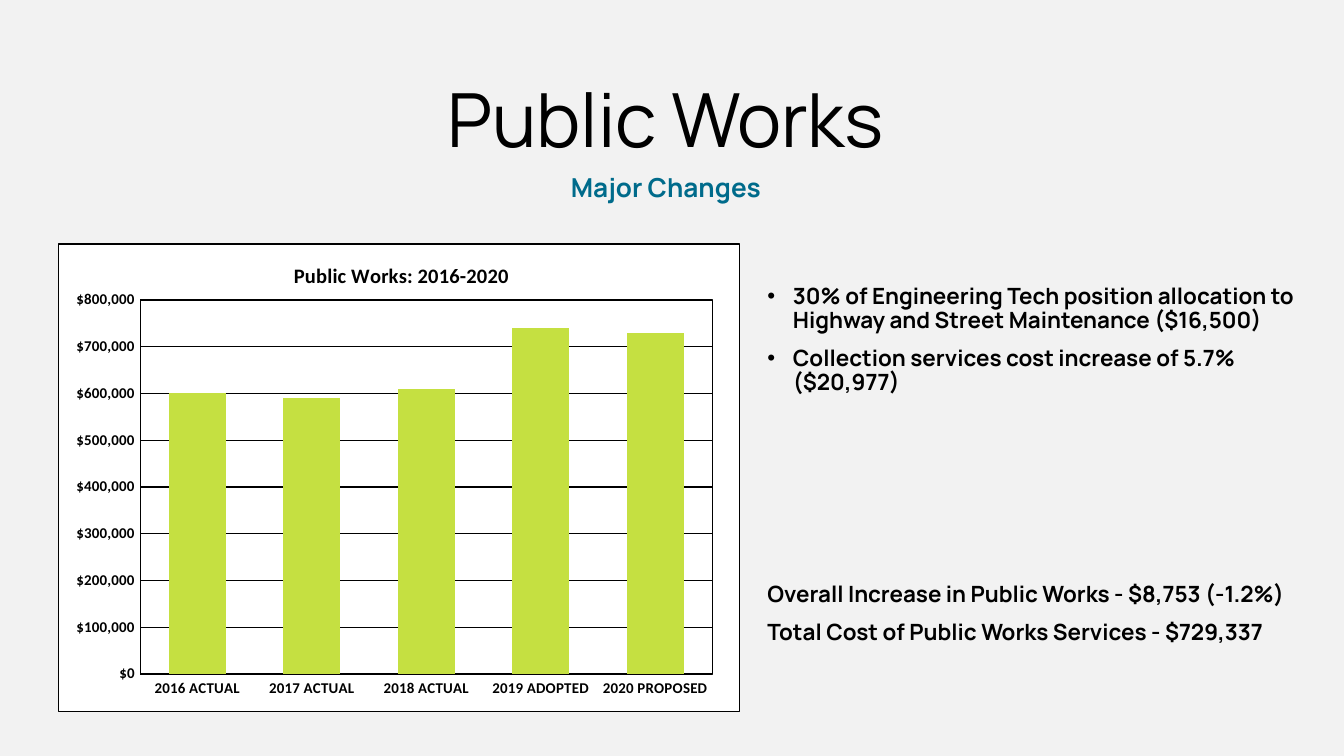
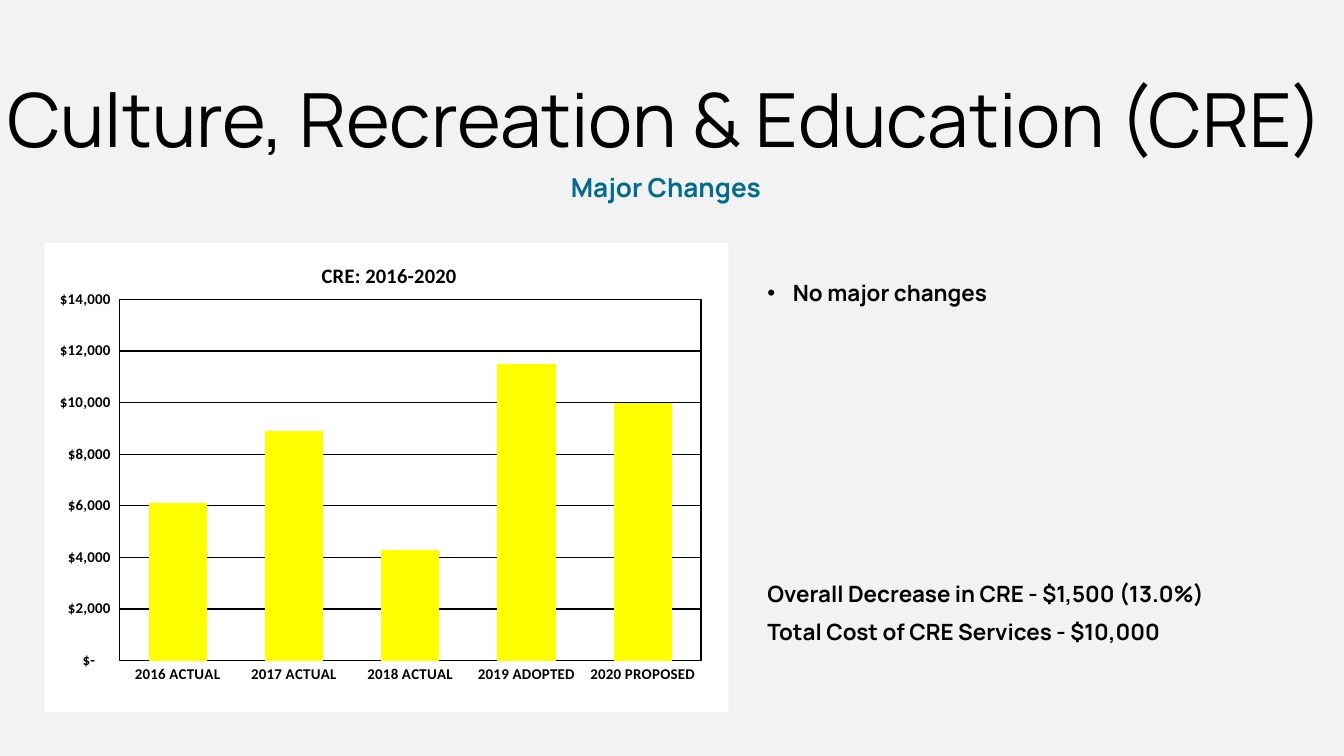
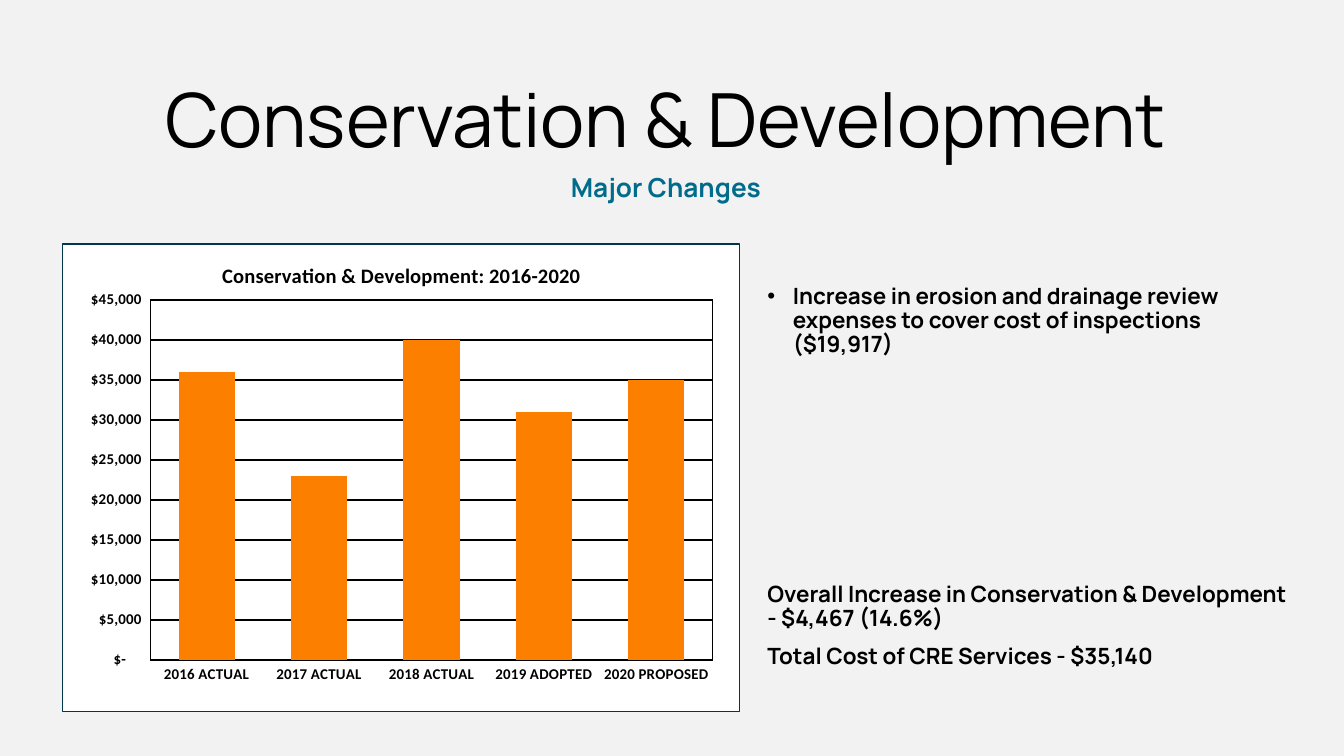
import pptx
import pptx.chart.data
import pptx.dml.color
import pptx.enum.chart
import pptx.enum.text
import pptx.oxml
import pptx.oxml.ns
import pptx.util
from pptx.util import Inches

BACKGROUND = "F2F2F2"
BLACK = "000000"
WHITE = "FFFFFF"
TEAL = "006B8B"
TEXT_FONT = "Manrope"
CHART_FONT = "Calibri"
YEARS = ["2016 ACTUAL", "2017 ACTUAL", "2018 ACTUAL", "2019 ADOPTED", "2020 PROPOSED"]
DOLLARS = '"$"#,##0'
ACCOUNTING = '_("$"* #,##0_);_("$"* \\(#,##0\\);_("$"* "-"??_);_(@_)'

# Boxes are left, top, width, height in inches
TITLE_BOX = (0, 0.57, 10, 0.63)
SUBTITLE_BOX = (2.73, 1.25, 4.55, 0.24)
SUMMARY_BOX = (5.71, 4.26, 3.95, 1.04)

DEPARTMENTS = [
    {
        "title": "Public Works",
        "changes": [
            "30% of Engineering Tech position allocation to Highway and Street Maintenance ($16,500)",
            "Collection services cost increase of 5.7% ($20,977)",
        ],
        "changes_box": (5.71, 2.04, 3.95, 0.33),
        "summary": [
            "Overall Increase in Public Works - $8,753 (-1.2%)",
            "Total Cost of Public Works Services - $729,337",
        ],
        "chart_box": (0.43, 1.81, 5.08, 3.49),
        "chart": {
            "title": "Public Works: 2016-2020", "title_left": 0.34,
            "values": [600000, 590000, 610000, 740000, 730000], "maximum": 800000,
            "number_format": DOLLARS, "color": "C5E041", "border": BLACK,
            "plot": (0.12, 0.12, 0.84, 0.8),
        },
    },
    {
        "title": "Culture, Recreation & Education (CRE)",
        "changes": ["No major changes"],
        "changes_box": (5.71, 2.02, 3.95, 0.33),
        "summary": [
            "Overall Decrease in CRE - $1,500 (13.0%)",
            "Total Cost of CRE Services - $10,000",
        ],
        "chart_box": (0.33, 1.81, 5.09, 3.49),
        "chart": {
            "title": "CRE: 2016-2020", "title_left": 0.4,
            "values": [6100, 8900, 4300, 11500, 10000], "maximum": 14000,
            "number_format": ACCOUNTING, "color": "FFFF00", "border": None,
            "plot": (0.11, 0.12, 0.85, 0.77),
        },
    },
    {
        "title": "Conservation & Development",
        "changes": [
            "Increase in erosion and drainage review expenses to cover cost of inspections ($19,917)",
        ],
        "changes_box": (5.71, 2.04, 3.95, 0.33),
        "summary": [
            "Overall Increase in Conservation & Development - $4,467 (14.6%)",
            "Total Cost of CRE Services - $35,140",
        ],
        "chart_box": (0.46, 1.81, 5.05, 3.49),
        "chart": {
            "title": "Conservation & Development: 2016-2020", "title_left": 0.23,
            "values": [36000, 23000, 40000, 31000, 35000], "maximum": 45000,
            "number_format": ACCOUNTING, "color": "FD7F00", "border": "003749",
            "plot": (0.13, 0.12, 0.83, 0.77),
        },
    },
]


def rgb(color):
    return pptx.dml.color.RGBColor.from_string(color)


def set_font(font, name, size, color=BLACK, bold=True):
    font.name = name
    font.size = pptx.util.Pt(size)
    font.bold = bold
    font.color.rgb = rgb(color)


def add_bullet(para):
    properties = para._p.get_or_add_pPr()
    properties.set("marL", str(Inches(0.19)))
    properties.set("indent", str(-Inches(0.19)))
    namespace = pptx.oxml.ns.nsdecls("a")
    for mark in ('buFont {} typeface="Arial"', 'buChar {} char="•"'):
        properties.append(pptx.oxml.parse_xml(f"<a:{mark.format(namespace)}/>"))


def add_text(page, box, lines, size, color=BLACK, bold=True, centered=False, bulleted=False):
    frame = page.shapes.add_textbox(*map(Inches, box)).text_frame
    frame.word_wrap = True
    frame.margin_left = 0
    frame.margin_right = Inches(0.1 if centered else 0)
    frame.margin_top = frame.margin_bottom = Inches(0.05 if centered else 0.08)
    for index, line in enumerate(lines):
        para = frame.paragraphs[0] if index == 0 else frame.add_paragraph()
        para.text = line
        para.line_spacing = 0.9
        para.space_before = pptx.util.Pt(10 if centered else 7.5)
        if centered:
            para.alignment = pptx.enum.text.PP_ALIGN.CENTER
        if bulleted:
            add_bullet(para)
        set_font(para.font, TEXT_FONT, size, color, bold)


def area_style(fill, border):
    """Fill and outline for the chart or plot area."""
    line = f'<a:solidFill><a:srgbClr val="{border}"/></a:solidFill>' if border else "<a:noFill/>"
    return pptx.oxml.parse_xml(
        f'<c:spPr {pptx.oxml.ns.nsdecls("c", "a")}>'
        f'<a:solidFill><a:srgbClr val="{fill}"/></a:solidFill>'
        f'<a:ln w="{pptx.util.Pt(0.75)}">{line}</a:ln></c:spPr>')


def set_layout(parent, position, values, inner=False):
    """Place a chart part by fractions of the chart: x, y and optionally w, h."""
    for old in parent.findall(pptx.oxml.ns.qn("c:layout")):
        parent.remove(old)
    target = '<c:layoutTarget val="inner"/>' if inner else ""
    modes = '<c:xMode val="edge"/><c:yMode val="edge"/>'
    sizes = "".join(f'<c:{key} val="{value}"/>' for key, value in zip("xywh", values))
    parent.insert(position, pptx.oxml.parse_xml(
        f'<c:layout {pptx.oxml.ns.nsdecls("c")}><c:manualLayout>'
        f'{target}{modes}{sizes}</c:manualLayout></c:layout>'))


def add_cost_chart(page, box, details):
    data = pptx.chart.data.CategoryChartData()
    data.categories = YEARS
    data.add_series("Series 1", details["values"])
    chart = page.shapes.add_chart(
        pptx.enum.chart.XL_CHART_TYPE.COLUMN_CLUSTERED, *map(Inches, box), data).chart
    chart.has_legend = False
    set_font(chart.font, CHART_FONT, 10)

    # Title
    chart.has_title = True
    title = chart.chart_title
    title.text_frame.text = details["title"]
    set_font(title.text_frame.paragraphs[0].font, CHART_FONT, 11)
    set_layout(title._element, 1, (details["title_left"], 0.03))

    # Columns
    plot = chart.plots[0]
    plot.gap_width = 100
    plot.overlap = -24
    plot.vary_by_categories = False
    fill = plot.series[0].format.fill
    fill.solid()
    fill.fore_color.rgb = rgb(details["color"])

    # Axes
    for axis in (chart.category_axis, chart.value_axis):
        axis.major_tick_mark = axis.minor_tick_mark = pptx.enum.chart.XL_TICK_MARK.NONE
        axis.format.line.fill.background()
        set_font(axis.tick_labels.font, CHART_FONT, 8)
    costs = chart.value_axis
    costs.minimum_scale = 0
    costs.maximum_scale = details["maximum"]
    costs.tick_labels.number_format = details["number_format"]
    costs.tick_labels.number_format_is_linked = False
    costs.has_major_gridlines = True
    costs.major_gridlines.format.line.color.rgb = rgb(BLACK)
    costs.major_gridlines.format.line.width = pptx.util.Pt(0.75)

    # Chart and plot areas
    chart_part = chart._chartSpace.chart
    chart_part.addnext(area_style(WHITE, details["border"]))
    plot_area = chart_part.plotArea
    plot_area.append(area_style(WHITE, BLACK))
    set_layout(plot_area, 0, details["plot"], inner=True)


def add_department_page(deck, department):
    page = deck.slides.add_slide(deck.slide_layouts[6])
    page.background.fill.solid()
    page.background.fill.fore_color.rgb = rgb(BACKGROUND)
    add_text(page, TITLE_BOX, [department["title"]], 40, bold=False, centered=True)
    add_text(page, SUBTITLE_BOX, ["Major Changes"], 14, TEAL, centered=True)
    add_text(page, department["changes_box"], department["changes"], 12, bulleted=True)
    add_text(page, SUMMARY_BOX, department["summary"], 12)
    add_cost_chart(page, department["chart_box"], department["chart"])


def main():
    deck = pptx.Presentation()
    # Widescreen, 16:9
    deck.slide_width = Inches(10)
    deck.slide_height = Inches(10 * 9 / 16)
    for department in DEPARTMENTS:
        add_department_page(deck, department)
    deck.save("out.pptx")


if __name__ == "__main__":
    main()
